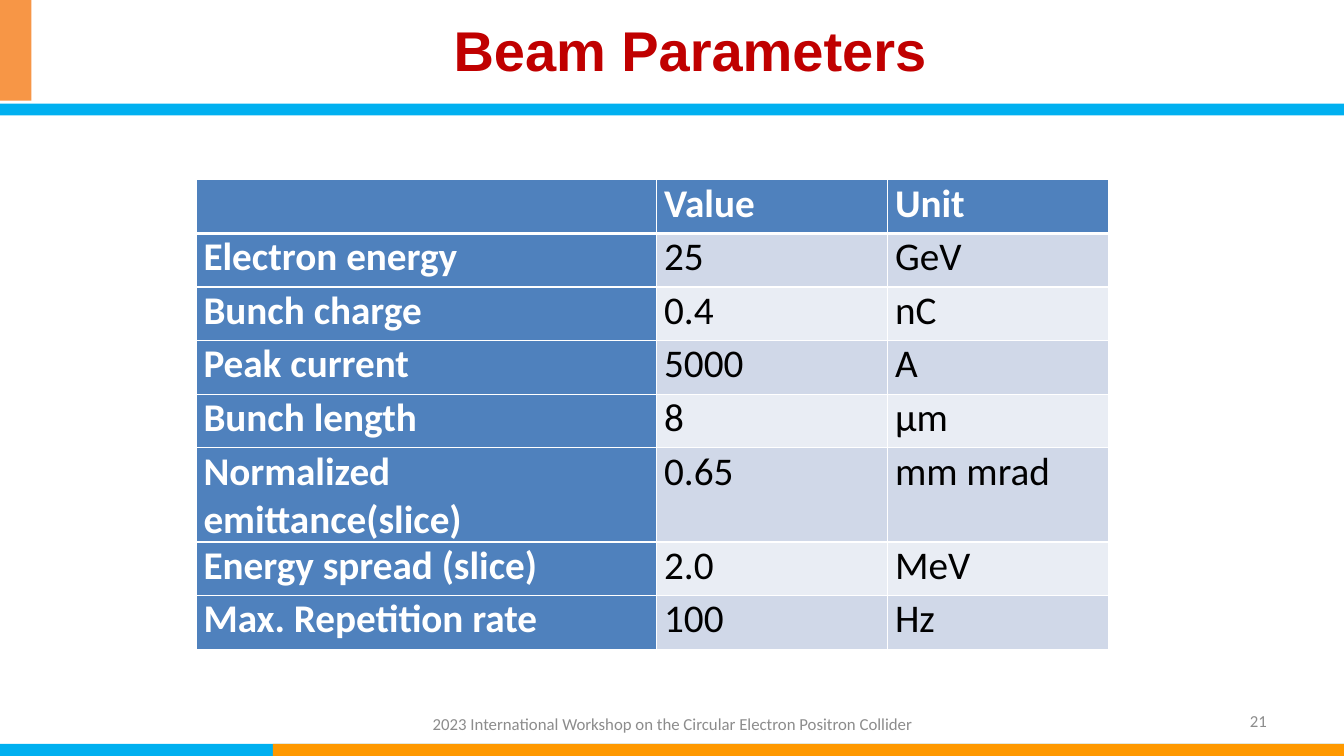
import pptx
import pptx.util
import pptx.dml.color
import pptx.enum.shapes
import pptx.enum.text
import pptx.oxml
import pptx.oxml.ns

Pt = pptx.util.Pt
Align = pptx.enum.text.PP_ALIGN
Mid = pptx.enum.text.MSO_ANCHOR.MIDDLE
HUES = {"sky": "00B0F0", "gold": "FF9900", "coral": "F79646", "red": "C00000",
        "gray": "8C8C8C", "blue": "4F81BD", "odd": "D0D8E8", "even": "E9EDF4",
        "white": "FFFFFF", "black": "000000"}


def paint(fill, hue):
    fill.solid()
    fill.fore_color.rgb = pptx.dml.color.RGBColor.from_string(HUES[hue])


def write(frame, text, size=12, font="Calibri", hue="gray", bold=False,
          align=Align.LEFT, space=1.0):
    frame.word_wrap = True
    para = frame.paragraphs[0]
    para.alignment = align
    para.line_spacing = space
    run = para.add_run()
    run.text = text
    run.font.size = Pt(size)
    run.font.name = font
    run.font.bold = bold
    paint(run.font.fill, hue)


deck = pptx.Presentation()
deck.slide_width, deck.slide_height = Pt(960), Pt(540)
slide = deck.slides.add_slide(deck.slide_layouts[5])
shapes = slide.shapes

# Title
title = shapes.title
title.left, title.top, title.width, title.height = Pt(26.6), Pt(9.4), Pt(932.4), Pt(57.6)
paint(title.fill, "white")
title.text_frame.vertical_anchor = Mid
write(title.text_frame, "Beam Parameters", size=40, font="Arial", hue="red",
      bold=True, align=Align.CENTER, space=0.9)

# Colour bars
bars = [("sky", 0, 531.4, 960, 8.6), ("gold", 195, 531.4, 765, 8.6),
        ("sky", 0, 74, 960, 8.4), ("coral", 0, 0, 22.4, 72)]
for hue, *box in bars:
    bar = shapes.add_shape(pptx.enum.shapes.MSO_SHAPE.RECTANGLE, *map(Pt, box))
    bar.shadow.inherit = False
    paint(bar.fill, hue)
    bar.line.fill.background()

# Footer and page number
notes = [("2023 International Workshop on the Circular Electron Positron Collider",
          Align.CENTER, 282, 503, 397, 28),
         ("21", Align.RIGHT, 688, 500.6, 224, 28.8)]
for text, align, *box in notes:
    frame = shapes.add_textbox(*map(Pt, box)).text_frame
    frame.vertical_anchor = Mid
    write(frame, text, align=align)

# Beam table
rows = [("", "Value", "Unit"),
        ("Electron energy ", "25", "GeV"),
        ("Bunch charge", "0.4 ", "nC"),
        ("Peak current", "5000", "A"),
        ("Bunch length", "8", "µm"),
        ("Normalized emittance(slice)", "0.65", "mm mrad"),
        ("Energy spread (slice)", "2.0 ", "MeV"),
        ("Max. Repetition rate", "100", "Hz")]
wide = [329, 165, 158]
tall = 38.3
table = shapes.add_table(len(rows), len(wide), Pt(140), Pt(128.4),
                         Pt(sum(wide)), Pt(tall * len(rows))).table
for col, width in zip(table.columns, wide):
    col.width = Pt(width)
for r, row in enumerate(rows):
    table.rows[r].height = Pt(tall)
    for c, text in enumerate(row):
        cell = table.cell(r, c)
        cell.margin_left = cell.margin_right = Pt(5.4)
        cell.margin_top = cell.margin_bottom = 0
        head = r == 0 or c == 0
        if text:
            write(cell.text_frame, text, size=28, bold=head,
                  hue="white" if head else "black", align=Align.JUSTIFY)
        # Borders go before the fill; the header rule is thicker
        props = cell._tc.get_or_add_tcPr()
        for side in "LRTB":
            thick = 3 if (r, side) in ((0, "B"), (1, "T")) else 1
            props.append(pptx.oxml.parse_xml(
                f'<a:ln{side} {pptx.oxml.ns.nsdecls("a")} w="{Pt(thick)}"><a:solidFill>'
                f'<a:srgbClr val="{HUES["white"]}"/></a:solidFill></a:ln{side}>'))
        paint(cell.fill, "blue" if head else "odd" if r % 2 else "even")

deck.save("out.pptx")
